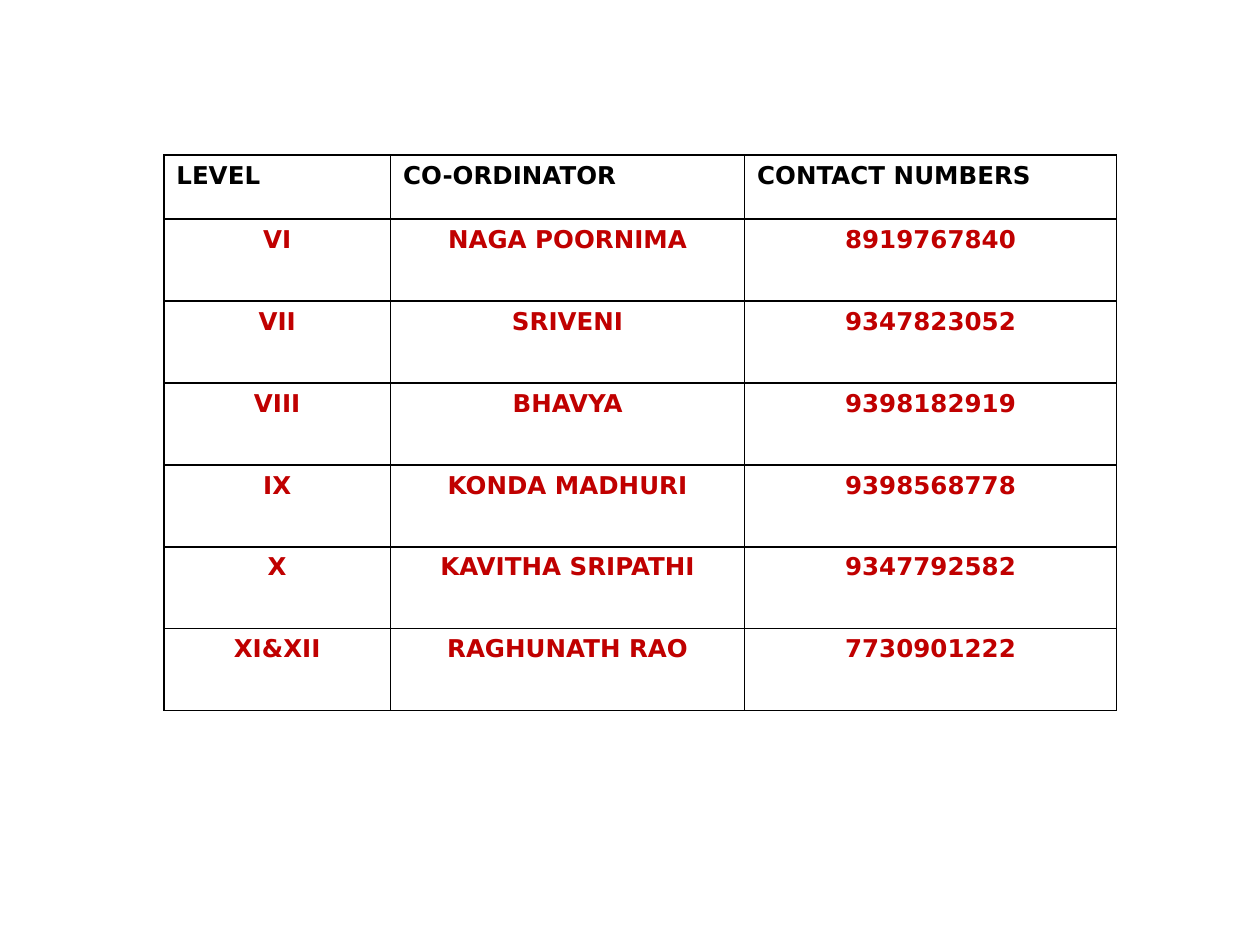
from pptx import Presentation
from pptx.dml.color import RGBColor
from pptx.enum.text import PP_ALIGN
from pptx.oxml import parse_xml
from pptx.oxml.ns import nsdecls
from pptx.util import Inches, Pt

LEFT, CENTER = PP_ALIGN.LEFT, PP_ALIGN.CENTER
BLACK = RGBColor(0x00, 0x00, 0x00)
RED = RGBColor(0xC0, 0x00, 0x00)
FONT = "DejaVu Sans"

COL_WIDTHS = [1.8, 2.81, 2.95]
HEADER_HEIGHT, ROW_HEIGHT = 0.51, 0.65
ROWS = [
    ("LEVEL", "CO-ORDINATOR", "CONTACT NUMBERS"),
    ("VI", "NAGA POORNIMA", "8919767840"),
    ("VII", "SRIVENI", "9347823052"),
    ("VIII", "BHAVYA", "9398182919"),
    ("IX", "KONDA MADHURI", "9398568778"),
    ("X", "KAVITHA SRIPATHI", "9347792582"),
    ("XI&XII", "RAGHUNATH RAO", "7730901222"),
]


def add_borders(cell):
    tcPr = cell._tc.get_or_add_tcPr()
    for side in ("lnL", "lnR", "lnT", "lnB"):
        tcPr.append(parse_xml(
            f'<a:{side} {nsdecls("a")} w="{Pt(1)}"><a:solidFill>'
            f'<a:srgbClr val="{BLACK}"/></a:solidFill></a:{side}>'))


prs = Presentation()
prs.slide_width, prs.slide_height = Inches(10), Inches(7.5)
s = prs.slides.add_slide(prs.slide_layouts[6])

# Contact table
heights = [HEADER_HEIGHT] + [ROW_HEIGHT] * (len(ROWS) - 1)
table = s.shapes.add_table(
    len(ROWS), len(COL_WIDTHS), Inches(1.3), Inches(1.23),
    Inches(sum(COL_WIDTHS)), Inches(sum(heights))).table
for column, width in zip(table.columns, COL_WIDTHS):
    column.width = Inches(width)
for row, height in zip(table.rows, heights):
    row.height = Inches(height)

# Header row in black, coordinators centred in red
for i, values in enumerate(ROWS):
    for j, value in enumerate(values):
        cell = table.cell(i, j)
        add_borders(cell)
        cell.fill.background()
        cell.text = value
        p = cell.text_frame.paragraphs[0]
        p.alignment = CENTER if i else LEFT
        p.font.name = FONT
        p.font.size = Pt(14)
        p.font.bold = True
        p.font.color.rgb = RED if i else BLACK

prs.save("out.pptx")
